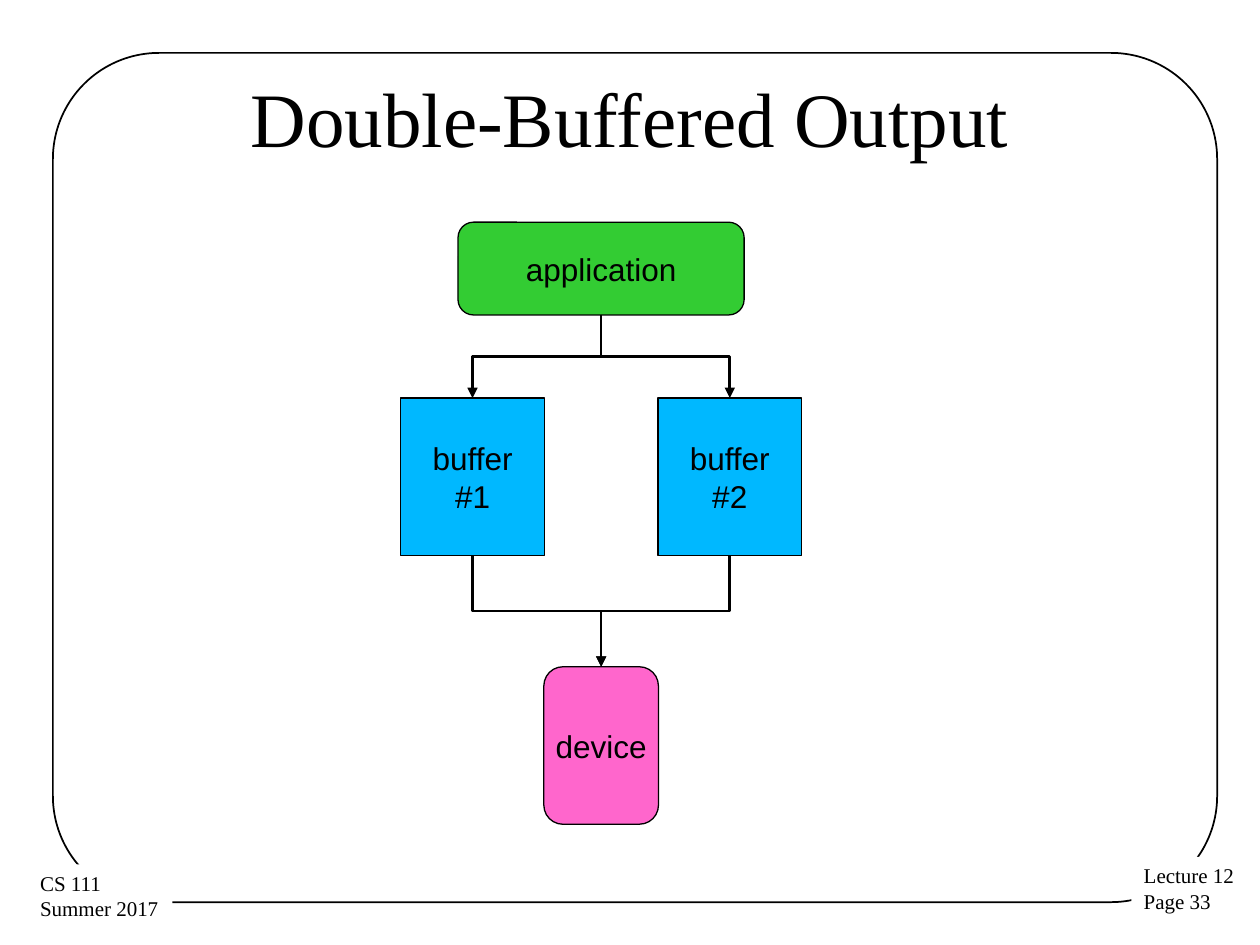
"""Build a slide showing how an application writes to a device through two buffers."""
from lxml import etree
from pptx import Presentation
from pptx.dml.color import RGBColor
from pptx.enum.shapes import MSO_CONNECTOR, MSO_SHAPE
from pptx.enum.text import MSO_ANCHOR, MSO_AUTO_SIZE, PP_ALIGN
from pptx.oxml.ns import qn
from pptx.util import Pt

RECT, ROUNDED = MSO_SHAPE.RECTANGLE, MSO_SHAPE.ROUNDED_RECTANGLE
ELBOW = MSO_CONNECTOR.ELBOW
MIDDLE, TOP = MSO_ANCHOR.MIDDLE, MSO_ANCHOR.TOP
CENTER, LEFT = PP_ALIGN.CENTER, PP_ALIGN.LEFT
GROW = MSO_AUTO_SIZE.SHAPE_TO_FIT_TEXT
COLORS = {"ink": "000000", "paper": "FFFFFF", "application": "33CC33",
          "buffer": "00B8FF", "device": "FF66CC"}


def add_box(kind, left, top, width, height, fill=None, line=None):
    """Add a flat shape with an optional fill and outline width."""
    box = page.shapes.add_shape(kind, Pt(left), Pt(top), Pt(width), Pt(height))
    box.shadow.inherit = False
    if fill:
        box.fill.solid()
        box.fill.fore_color.rgb = RGBColor.from_string(COLORS[fill])
    else:
        box.fill.background()
    if line:
        box.line.color.rgb = RGBColor.from_string(COLORS["ink"])
        box.line.width = Pt(line)
    else:
        box.line.fill.background()
    return box


def write_lines(box, lines, font, size, align, anchor):
    """Write one paragraph per line in a single style."""
    frame = box.text_frame
    frame.vertical_anchor = anchor
    for index, line in enumerate(lines):
        para = frame.add_paragraph() if index else frame.paragraphs[0]
        para.alignment = align
        span = para.add_run()
        span.text = line
        span.font.name = font
        span.font.size = Pt(size)
        span.font.color.rgb = RGBColor.from_string(COLORS["ink"])


deck = Presentation()
deck.slide_width, deck.slide_height = Pt(720), Pt(540)
page = deck.slides.add_slide(deck.slide_layouts[5])

border = add_box(ROUNDED, 30.24, 30.24, 665.28, 485.28, line=1)
border.adjustments[0] = 0.125

corner_labels = [
    (646.5, 489.6, 67, ["Lecture 12", "Page 33"]),
    (15.8, 493.9, 82.8, ["CS 111", "Summer 2017"]),
]
for left, top, width, lines in corner_labels:
    label = add_box(RECT, left, top, width, 36.7, fill="paper")
    label.text_frame.word_wrap = False
    label.text_frame.auto_size = GROW
    write_lines(label, lines, "Times New Roman", 12, LEFT, TOP)

title = page.shapes.title
title.left, title.top, title.width, title.height = Pt(36), Pt(21.6), Pt(648), Pt(90)
write_lines(title, ["Double-Buffered Output"], "Times New Roman", 44, CENTER, MIDDLE)

buffer_centers = [270, 417]
middle = sum(buffer_centers) / 2
application_top, application_height = 127, 53
buffer_top, device_top, block_height = 227.5, 381, 90

blocks = [
    (RECT, center, buffer_top, 82, block_height, "buffer", ["buffer", f"#{number}"])
    for number, center in enumerate(buffer_centers, 1)
]
blocks += [
    (ROUNDED, middle, application_top, 163.5, application_height, "application", ["application"]),
    (ROUNDED, middle, device_top, 65.5, block_height, "device", ["device"]),
]
for kind, center, top, width, height, fill, lines in blocks:
    block = add_box(kind, center - width / 2, top, width, height, fill, 0.75)
    frame = block.text_frame
    frame.word_wrap = False
    frame.margin_left = frame.margin_right = Pt(6.5)
    frame.margin_top = frame.margin_bottom = Pt(3)
    write_lines(block, lines, "Arial", 18, CENTER, MIDDLE)

application_bottom = application_top + application_height
buffer_bottom = buffer_top + block_height
flows = [(middle, application_bottom, center, buffer_top) for center in buffer_centers]
flows += [(center, buffer_bottom, middle, device_top) for center in buffer_centers]
for start_x, start_y, end_x, end_y in flows:
    center_x, center_y = (start_x + end_x) / 2, (start_y + end_y) / 2
    half_drop, half_span = (end_y - start_y) / 2, abs(end_x - start_x) / 2
    side = 1 if end_x > start_x else -1
    arrow = page.shapes.add_connector(
        ELBOW, Pt(center_x + side * half_drop), Pt(center_y - half_span),
        Pt(center_x - side * half_drop), Pt(center_y + half_span))
    arrow.line.color.rgb = RGBColor.from_string(COLORS["ink"])
    arrow.line.width = Pt(1.5)
    properties = arrow.element.spPr
    properties.find(qn("a:xfrm")).set("rot", str((270 if side > 0 else 90) * 60000))
    etree.SubElement(properties.find(qn("a:ln")), qn("a:tailEnd"), type="triangle")
    etree.SubElement(properties, qn("a:effectLst"))

deck.save("out.pptx")
